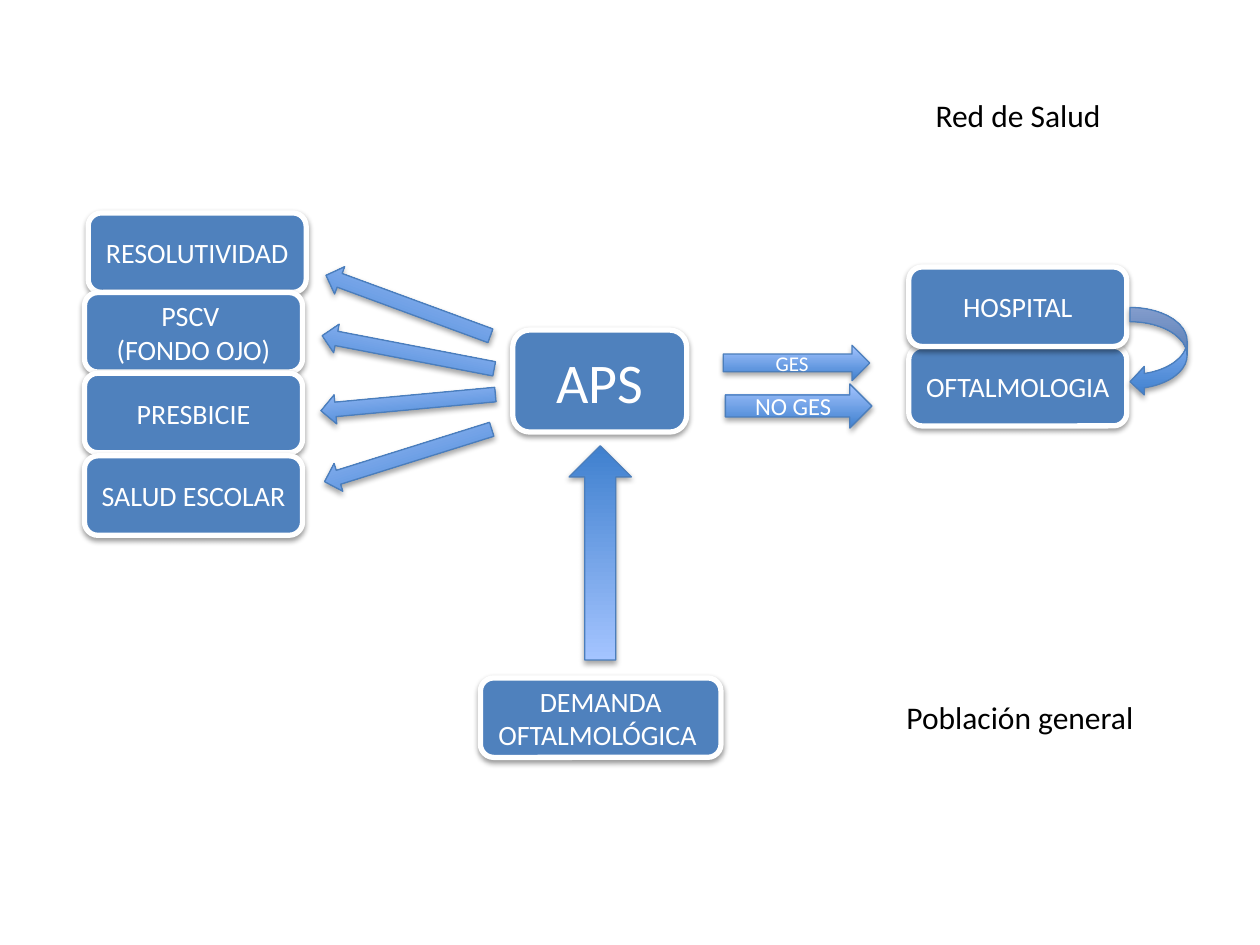
import pptx
import pptx.util
import pptx.dml.color
import pptx.enum.shapes
import pptx.enum.text
import pptx.oxml.ns
import lxml.etree

Pt = pptx.util.Pt
SHAPE = pptx.enum.shapes.MSO_SHAPE
COLORS = {
    "box": "4F81BD",
    "white": "FFFFFF",
    "black": "000000",
    "arrow_dark": "3F80CE",
    "arrow_light": "A4C4FF",
    "arrow_edge": "4B7EBC",
}


class Diagram:
    font = "Calibri"

    def __init__(self, slide):
        self.slide = slide

    def color(self, name):
        return pptx.dml.color.RGBColor.from_string(COLORS[name])

    def set_text(self, frame, text, size, color):
        frame.word_wrap = True
        frame.text = text
        for paragraph in frame.paragraphs:
            paragraph.alignment = pptx.enum.text.PP_ALIGN.CENTER
            for run in paragraph.runs:
                run.font.name = self.font
                run.font.size = Pt(size)
                run.font.color.rgb = self.color(color)

    def outline(self, shape, color, width):
        shape.line.color.rgb = self.color(color)
        shape.line.width = Pt(width)

    def shade(self, shape, distance, opacity):
        qn = pptx.oxml.ns.qn
        shape.shadow.inherit = False
        effects = shape.element.spPr.find(qn("a:effectLst"))
        shadow = lxml.etree.SubElement(
            effects, qn("a:outerShdw"), blurRad=str(Pt(3.15)),
            dist=str(Pt(distance)), dir="5400000", rotWithShape="0")
        tint = lxml.etree.SubElement(shadow, qn("a:srgbClr"), val=COLORS["black"])
        lxml.etree.SubElement(tint, qn("a:alpha"), val=str(opacity * 1000))

    def shape(self, kind, left, top, width, height, text, size):
        shape = self.slide.shapes.add_shape(
            kind, Pt(left), Pt(top), Pt(width), Pt(height))
        if text:
            self.set_text(shape.text_frame, text, size, "white")
            shape.text_frame.vertical_anchor = pptx.enum.text.MSO_ANCHOR.MIDDLE
        return shape

    def box(self, text, left, top, width=124.6, height=45.4, size=16):
        box = self.shape(SHAPE.ROUNDED_RECTANGLE, left, top, width, height, text, size)
        box.fill.solid()
        box.fill.fore_color.rgb = self.color("box")
        self.outline(box, "white", 3)
        self.shade(box, 1.6, 38)

    def arrow(self, kind, left, top, width, height, rotation=0, text="", size=12):
        arrow = self.shape(kind, left, top, width, height, text, size)
        arrow.rotation = rotation
        arrow.fill.gradient()
        arrow.fill.gradient_angle = 90
        for stop, position, name in zip(
                arrow.fill.gradient_stops, (0, 1), ("arrow_dark", "arrow_light")):
            stop.position = position
            stop.color.rgb = self.color(name)
        self.outline(arrow, "arrow_edge", 0.75)
        self.shade(arrow, 1.8, 35)

    def label(self, text, left, top, width):
        label = self.slide.shapes.add_textbox(Pt(left), Pt(top), Pt(width), Pt(29))
        self.set_text(label.text_frame, text, 18, "black")
        label.text_frame.auto_size = pptx.enum.text.MSO_AUTO_SIZE.SHAPE_TO_FIT_TEXT


def main():
    deck = pptx.Presentation()
    deck.slide_width, deck.slide_height = Pt(720), Pt(540)
    diagram = Diagram(deck.slides.add_slide(deck.slide_layouts[6]))

    diagram.box("APS", 293, 188.6, 99.4, 58.3, size=32)
    diagram.box("DEMANDA OFTALMOLÓGICA ", 274.5, 387.4, 137.5)
    diagram.box("RESOLUTIVIDAD", 50.4, 121.7)
    diagram.box("OFTALMOLOGIA ", 519.3, 198)
    diagram.box("HOSPITAL", 519.3, 152.6)

    diagram.arrow(SHAPE.DOWN_ARROW, 325.2, 254.7, 35.6, 122.4, 180)
    diagram.arrow(SHAPE.RIGHT_ARROW, 414.5, 219.4, 83.7, 25.2, text="NO GES", size=14)
    diagram.arrow(SHAPE.CURVED_LEFT_ARROW, 645.8, 175.7, 32.6, 50.6)
    diagram.arrow(SHAPE.RIGHT_ARROW, 413.3, 197.3, 83.7, 20.2, text="GES")

    programs = [("PSCV \n(FONDO OJO)", 167.2), ("PRESBICIE", 213.3),
                ("SALUD ESCOLAR", 260.5)]
    for program, top in programs:
        diagram.box(program, 48.3, top)

    for top, rotation in [(166.3, 20.2), (193, 10.9), (221.8, -5.3), (252, -17.4)]:
        diagram.arrow(SHAPE.LEFT_ARROW, 183.2, top, 100.1, 16.6, rotation)

    diagram.label("Población general", 506.9, 395.3, 151.9)
    diagram.label("Red de Salud", 513.4, 51.1, 136.8)

    deck.save("out.pptx")


if __name__ == "__main__":
    main()
